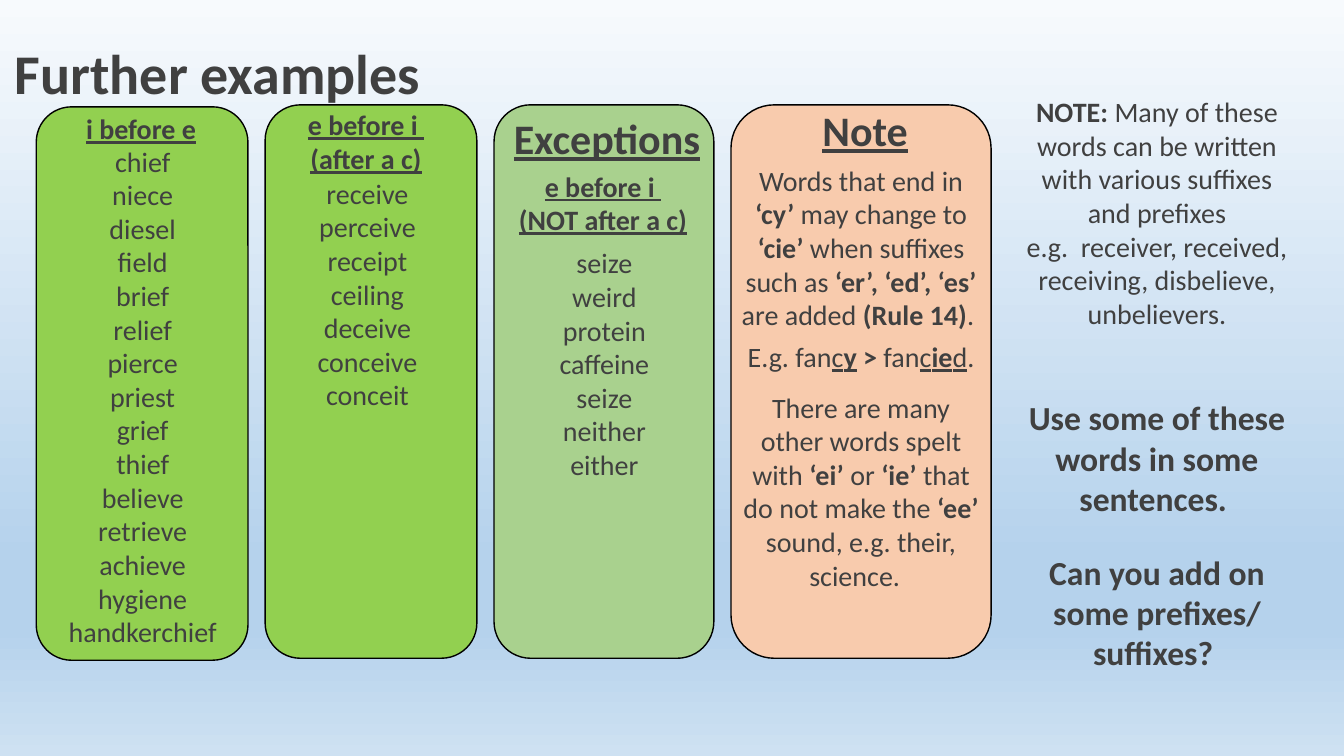
from copy import deepcopy

from lxml import etree
from pptx import Presentation
from pptx.dml.color import RGBColor
from pptx.enum import shapes, text
from pptx.oxml.ns import qn
from pptx.util import Pt

PX = 9144  # 100 px to the inch
INK = "404040"
BACKGROUND = [(0, "F7FAFD"), (74, "B5D2EC"), (83, "B5D2EC"), (100, "CEE1F2")]

# Cards: left, top, width, fill
CARD_HEIGHT = 549
CARDS = [
    (36, 106, 210, "92D050"),
    (263, 104, 210, "92D050"),
    (490, 104, 218, "A9D18E"),
    (725, 104, 258, "F8CBAD"),
]

# Plain text: box, size, style (b bold, u underline), lines
LINES = [
    ((18, 106, 244, 44), 20, "bu", ["i before e"]),
    ((22, 138, 239, 515), 20, "", [
        "chief", "niece", "diesel", "field", "brief", "relief", "pierce", "priest",
        "grief", "thief", "believe", "retrieve", "achieve", "hygiene", "handkerchief"]),
    ((262, 102, 202, 77), 20, "bu", ["e before i ", "(after a c)"]),
    ((263, 170, 203, 263), 20, "", [
        "receive", "perceive", "receipt", "ceiling", "deceive", "conceive", "conceit"]),
    ((488, 107, 228, 61), 30, "bu", ["Exceptions"]),
    ((497, 163, 202, 77), 20, "bu", ["e before i ", "(NOT after a c)"]),
    ((498, 239, 203, 246), 20, "", [
        "seize", "weird", "protein", "caffeine", "seize", "neither", "either"]),
    ((744, 99, 228, 61), 30, "bu", ["Note"]),
]

# Mixed text: paragraphs of (space before, size, [(words, style), ...])
NOTE_BOX = (725, 157, 258, 439)
NOTE = [
    (0, 20, [("Words that end in ", ""), ("‘cy’ ", "b"), ("may change to ", ""),
             ("‘cie’", "b"), (" when suffixes such as ", ""),
             ("‘er’, ‘ed’, ‘es’ ", "b"), ("are added ", ""),
             ("(Rule 14)", "b"), (".  ", "")]),
    (6, 20, [("E.g. fan", ""), ("c", "u"), ("y", "bu"), (" ", ""), (">", "b"),
             (" fan", ""), ("c", "u"), ("ie", "bu"), ("d", "u"), (".", "")]),
    (12, 20, [("There are many other words spelt with ", ""), ("‘ei’", "b"),
              (" or ", ""), ("‘ie’ ", "b"), ("that do not make the ", ""),
              ("‘ee’ ", "b"), ("sound, e.g. their, science.  ", "")]),
]
TASK_BOX = (1000, 89, 295, 589)
TASK = [
    (0, 20, [("NOTE: ", "b"),
             ("Many of these words can be written with various suffixes and prefixes", "")]),
    (0, 20, [("e.g.  receiver, received, receiving, disbelieve, unbelievers.", "")]),
    (48, 24, [("Use some of these words in some sentences. ", "b")]),
    (24, 24, [("Can you add on some prefixes/ suffixes? ", "b")]),
]


def color(value):
    return RGBColor.from_string(value)


def scaled(box):
    return [side * PX for side in box]


def add_text(page, box, paragraphs, align=text.PP_ALIGN.CENTER,
             anchor=text.MSO_ANCHOR.TOP, spacing=None):
    frame = page.shapes.add_textbox(*scaled(box)).text_frame
    frame.word_wrap = True
    frame.vertical_anchor = anchor
    for index, (before, size, spans) in enumerate(paragraphs):
        para = frame.paragraphs[0] if index == 0 else frame.add_paragraph()
        layout = {"alignment": align, "space_before": Pt(before), "line_spacing": spacing}
        for name, value in layout.items():
            setattr(para, name, value)
        for words, style in spans:
            span = para.add_run()
            span.text = words
            span.font.color.rgb = color(INK)
            look = {"name": "Calibri", "size": Pt(size),
                    "bold": "b" in style, "underline": "u" in style}
            for name, value in look.items():
                setattr(span.font, name, value)


def paint_background(page):
    fill = page.background.fill
    fill.gradient()
    fill.gradient_angle = 270
    stops = next(page.element.iter(qn("a:gsLst")))
    model = deepcopy(stops[0])
    for stop in list(stops):
        stops.remove(stop)
    for position, value in BACKGROUND:
        stop = deepcopy(model)
        stop.set("pos", str(position * 1000))
        for child in list(stop):
            stop.remove(child)
        etree.SubElement(stop, qn("a:srgbClr")).set("val", value)
        stops.append(stop)


def main():
    deck = Presentation()
    deck.slide_width, deck.slide_height = scaled((1333, 750))
    page = deck.slides.add_slide(deck.slide_layouts[6])
    paint_background(page)

    # Title
    add_text(page, (5, 13, 900, 125), [(0, 40, [("Further examples", "b")])],
             text.PP_ALIGN.LEFT, text.MSO_ANCHOR.MIDDLE, 0.9)

    # Cards
    for left, top, width, fill in CARDS:
        card = page.shapes.add_shape(shapes.MSO_SHAPE.ROUNDED_RECTANGLE,
                                     *scaled((left, top, width, CARD_HEIGHT)))
        card.shadow.inherit = False
        card.fill.solid()
        card.fill.fore_color.rgb = color(fill)
        card.line.color.rgb = color("000000")
        card.line.width = Pt(1)

    # Headings and word lists
    for box, size, style, lines in LINES:
        add_text(page, box, [(0, size, [(line, style)]) for line in lines])

    # Note and tasks
    add_text(page, NOTE_BOX, NOTE)
    add_text(page, TASK_BOX, TASK)
    deck.save("out.pptx")


if __name__ == "__main__":
    main()
